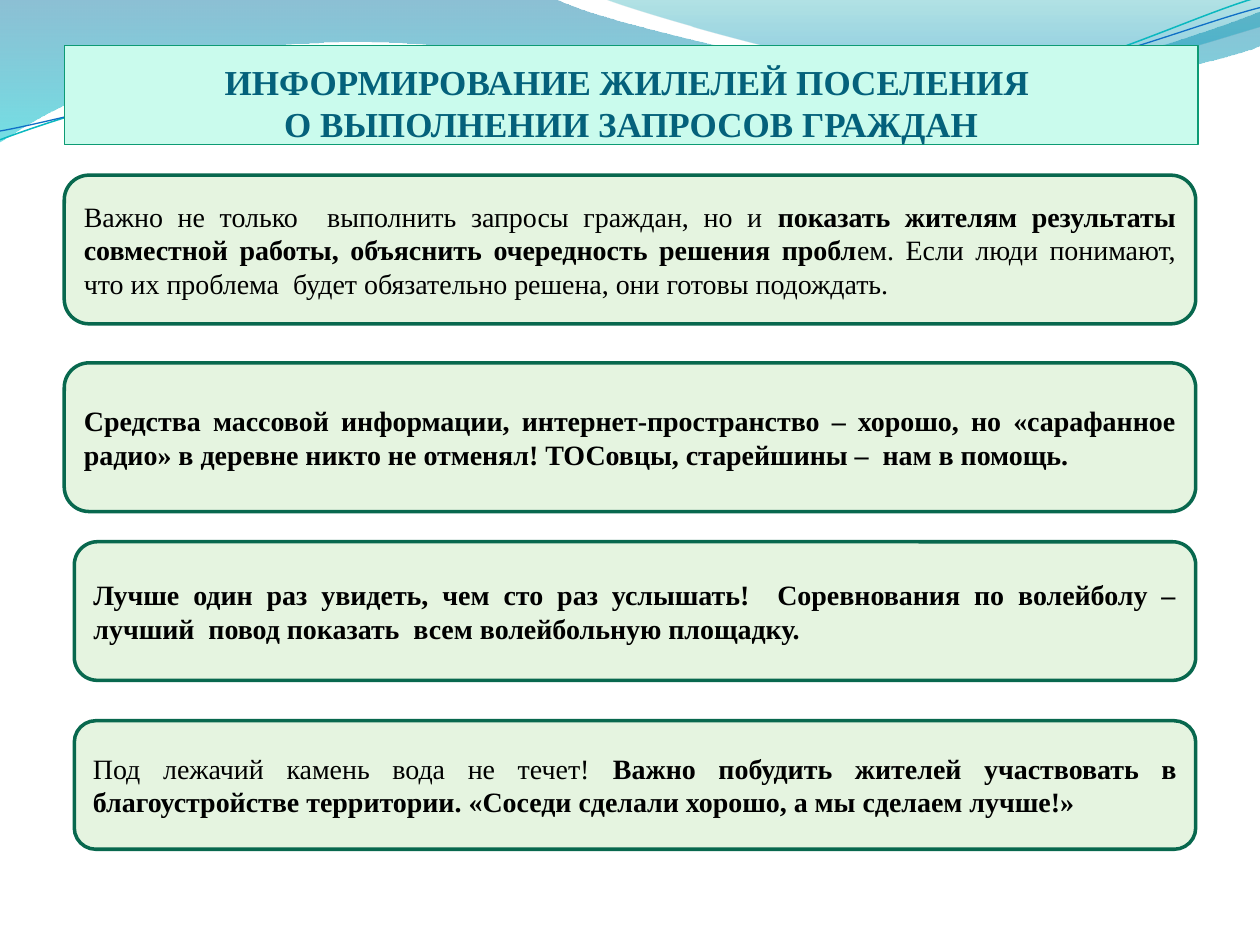
"""Build the slide on informing residents about fulfilled requests."""
import math
from dataclasses import dataclass

import pptx
import pptx.dml.color
import pptx.enum.shapes
import pptx.enum.text
import pptx.oxml.ns
import pptx.util
from lxml import etree
from pptx.util import Inches


@dataclass(frozen=True)
class Theme:
    """Colours, font and type sizes."""
    font: str = "Times New Roman"
    title_size: int = 20
    body_size: int = 16
    title_text: str = "04617B"
    title_fill: str = "CAFBED"
    title_line: str = "0C9B74"
    body_text: str = "000000"
    card_fill: str = "E5F4E0"
    card_line: str = "08684E"
    left_wave: tuple = ((0, "0074A1", 45), (1, "00C6CF", 55))
    right_wave: tuple = ((0, "00A1A9", 30), (0.8, "008BBF", 45))
    teal_line: str = "0AB8BF"
    blue_line: str = "0F6FC6"


THEME = Theme()

LEFT_WAVE_BOX = (-0.01, -0.01, 10.02, 1.14)
LEFT_WAVE = [
    (0, 0), (4.4, -0.01),
    (4.76, 0.17, 6.64, 0.63, 7.58, 0.63), (8.53, 0.63, 9.58, 0.26, 10, 0.09),
    (10.01, 0.36),
    (9.83, 0.44, 8.7, 0.76, 7.46, 0.75), (6.22, 0.75, 3.82, 0.28, 2.57, 0.34),
    (1.29, 0.36, 0.46, 0.83, -0.01, 1.13), (0, 0),
]
RIGHT_WAVE_BOX = (4.79, -0.01, 5.21, 0.7)
RIGHT_WAVE = [
    (4.79, -0.01),
    (5.09, 0.11, 6.82, 0.62, 7.69, 0.65), (8.56, 0.69, 9.61, 0.32, 10, 0.21),
    (10, 0), (4.79, -0.01),
]
CURVE_ROTATION = 357.3
TEAL_CURVE_BOX = (-0.02, 0.22, 10.02, 0.71)
TEAL_CURVE = [
    (0, 1.11),
    (0.48, 0.93, 1.58, 0.57, 2.77, 0.52), (3.95, 0.47, 5.93, 0.89, 7.13, 0.8),
    (8.33, 0.71, 9.38, 0.15, 9.98, -0.02),
]
BLUE_CURVE_BOX = (-0.02, 0.3, 10.03, 0.58)
BLUE_CURVE = [
    (0, 1.04),
    (0.47, 0.96, 1.64, 0.61, 2.83, 0.56), (4.03, 0.51, 5.97, 0.84, 7.17, 0.75),
    (8.36, 0.67, 9.41, 0.21, 10, 0.06),
]

TITLE = "ИНФОРМИРОВАНИЕ ЖИЛЕЛЕЙ ПОСЕЛЕНИЯ \vО ВЫПОЛНЕНИИ ЗАПРОСОВ ГРАЖДАН"
CARDS = [
    ((0.51, 1.39, 8.98, 1.18), [
        ("Важно не только  выполнить запросы граждан, но и ", False),
        ("показать жителям результаты совместной работы, объяснить "
         "очередность решения пробл", True),
        ("ем. Если люди понимают, что их проблема  будет обязательно решена, "
         "они готовы подождать.", False)]),
    ((0.59, 4.3, 8.9, 1.1), [
        ("Лучше один раз увидеть, чем сто раз услышать!  Соревнования по "
         "волейболу – лучший  повод показать  всем волейбольную площадку.", True)]),
    ((0.51, 2.88, 8.98, 1.18), [
        ("Средства массовой информации, интернет-пространство – хорошо, но "
         "«сарафанное радио» в деревне никто не отменял! ТОСовцы, "
         "старейшины –  нам в помощь.", True)]),
    ((0.59, 5.72, 8.9, 1.02), [
        ("Под лежачий камень вода не течет! ", False),
        ("Важно побудить жителей участвовать в благоустройстве территории. "
         "«Соседи сделали хорошо, а мы сделаем лучше!»", True)]),
]


def rgb(value):
    """Return a colour object for a hex string."""
    return pptx.dml.color.RGBColor.from_string(value)


def local_points(segment, box, rotation):
    """Return a segment's points in the unrotated frame of its box."""
    left, top, width, height = box
    angle = math.radians(-rotation)
    for x, y in zip(segment[::2], segment[1::2]):
        dx, dy = x - left - width / 2, y - top - height / 2
        yield (Inches(dx * math.cos(angle) - dy * math.sin(angle) + width / 2),
               Inches(dx * math.sin(angle) + dy * math.cos(angle) + height / 2))


def add_outline(slide, outline, box, close, rotation=0):
    """Draw a freeform of straight and cubic segments."""
    segments = [list(local_points(segment, box, rotation)) for segment in outline]
    builder = slide.shapes.build_freeform(*segments[0][0])
    builder.add_line_segments([points[-1] for points in segments[1:]], close=close)
    shape = builder.convert_to_shape()
    shape.left, shape.top, shape.width, shape.height = map(Inches, box)
    shape.rotation = rotation
    shape.shadow.inherit = False
    path = shape.element.spPr.find(".//" + pptx.oxml.ns.qn("a:path"))
    path.set("w", str(shape.width))
    path.set("h", str(shape.height))
    for command, points in zip(list(path), segments):
        if len(points) == 3:
            command.tag = pptx.oxml.ns.qn("a:cubicBezTo")
        for child in list(command):
            command.remove(child)
        for x, y in points:
            etree.SubElement(command, pptx.oxml.ns.qn("a:pt"), x=str(x), y=str(y))
    return shape


def add_wave(slide, outline, box, stops):
    """Draw a wave with a translucent vertical gradient."""
    shape = add_outline(slide, outline, box, True)
    shape.line.fill.background()
    shape.fill.gradient()
    shape.fill.gradient_angle = 270
    for stop, (position, colour, _) in zip(shape.fill.gradient_stops, stops):
        stop.position = position
        stop.color.rgb = rgb(colour)
    colours = shape.element.spPr.findall(".//" + pptx.oxml.ns.qn("a:srgbClr"))
    for element, (_, _, opacity) in zip(colours, stops):
        alpha = etree.SubElement(element, pptx.oxml.ns.qn("a:alpha"))
        alpha.set("val", str(opacity * 1000))


def set_line(shape, colour, width):
    """Give a shape a solid outline."""
    shape.line.color.rgb = rgb(colour)
    shape.line.width = pptx.util.Pt(width)


def add_curve(slide, outline, box, colour, width):
    """Draw an open thin curve."""
    shape = add_outline(slide, outline, box, False, CURVE_ROTATION)
    shape.fill.background()
    set_line(shape, colour, width)


def add_box(slide, preset, box, fill, line, width):
    """Add a filled and outlined preset shape."""
    shape = slide.shapes.add_shape(preset, *map(Inches, box))
    shape.shadow.inherit = False
    shape.fill.solid()
    shape.fill.fore_color.rgb = rgb(fill)
    set_line(shape, line, width)
    shape.text_frame.word_wrap = True
    return shape


def format_font(font, size, colour, bold):
    """Set the face, size, colour and weight of a font."""
    font.name = THEME.font
    font.size = pptx.util.Pt(size)
    font.color.rgb = rgb(colour)
    font.bold = bold


def add_title(slide):
    """Add the title band."""
    shape = add_box(slide, pptx.enum.shapes.MSO_SHAPE.RECTANGLE, (0.51, 0.36, 9, 0.79),
                    THEME.title_fill, THEME.title_line, 0.75)
    frame = shape.text_frame
    frame.margin_left = frame.margin_right = frame.margin_bottom = 0
    frame.vertical_anchor = pptx.enum.text.MSO_ANCHOR.BOTTOM
    paragraph = frame.paragraphs[0]
    paragraph.text = TITLE
    paragraph.alignment = pptx.enum.text.PP_ALIGN.CENTER
    for run in paragraph.runs:
        format_font(run.font, THEME.title_size, THEME.title_text, True)


def add_card(slide, box, pieces):
    """Add a rounded card with justified text."""
    shape = add_box(slide, pptx.enum.shapes.MSO_SHAPE.ROUNDED_RECTANGLE, box,
                    THEME.card_fill, THEME.card_line, 2)
    shape.text_frame.vertical_anchor = pptx.enum.text.MSO_ANCHOR.MIDDLE
    paragraph = shape.text_frame.paragraphs[0]
    paragraph.alignment = pptx.enum.text.PP_ALIGN.JUSTIFY
    for text, bold in pieces:
        run = paragraph.add_run()
        run.text = text
        format_font(run.font, THEME.body_size, THEME.body_text, bold)


def main():
    """Build and save the presentation."""
    presentation = pptx.Presentation()
    presentation.slide_width, presentation.slide_height = Inches(10), Inches(7.5)
    slide = presentation.slides.add_slide(presentation.slide_layouts[6])
    add_wave(slide, LEFT_WAVE, LEFT_WAVE_BOX, THEME.left_wave)
    add_wave(slide, RIGHT_WAVE, RIGHT_WAVE_BOX, THEME.right_wave)
    add_curve(slide, TEAL_CURVE, TEAL_CURVE_BOX, THEME.teal_line, 0.85)
    add_curve(slide, BLUE_CURVE, BLUE_CURVE_BOX, THEME.blue_line, 0.75)
    add_title(slide)
    for box, pieces in CARDS:
        add_card(slide, box, pieces)
    presentation.save("out.pptx")


if __name__ == "__main__":
    main()
